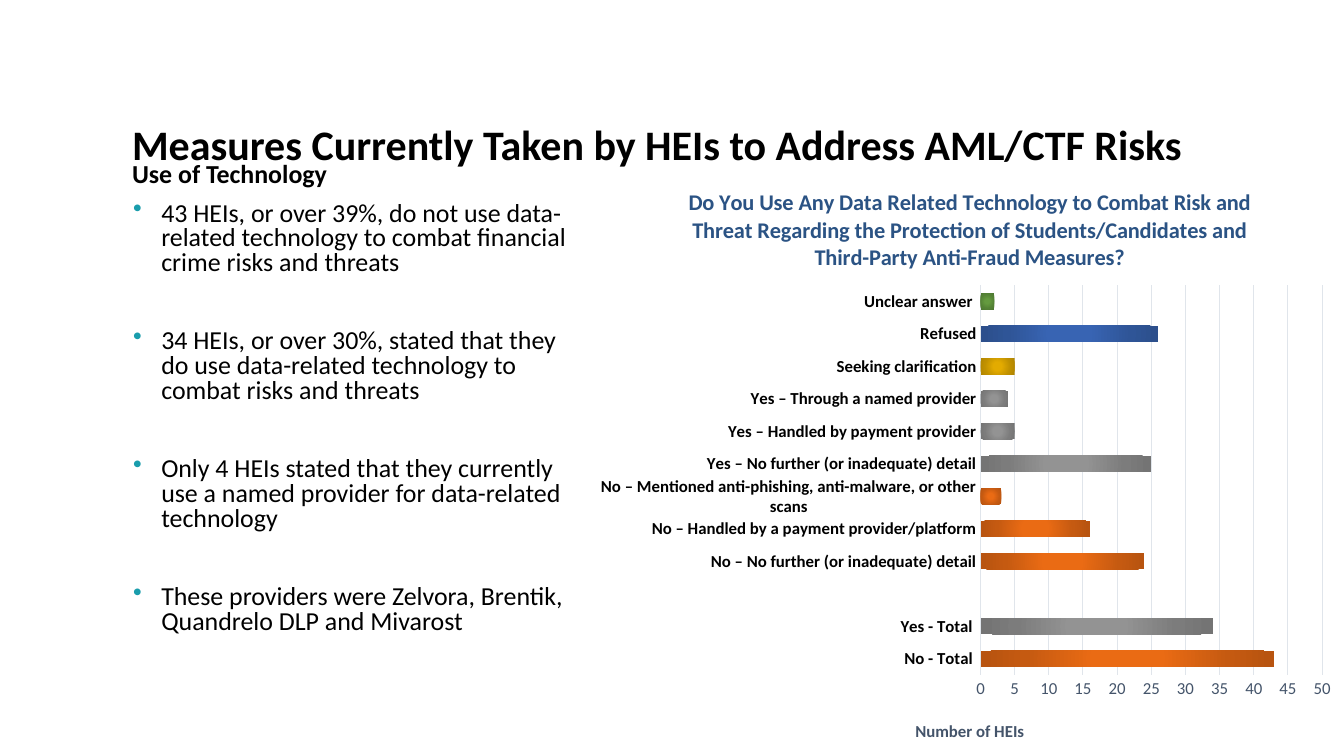
from pptx import Presentation
from pptx.chart.data import CategoryChartData
from pptx.dml.color import RGBColor
from pptx.enum.chart import XL_CHART_TYPE as ChartType, XL_TICK_MARK as TickMark
from pptx.enum.text import MSO_ANCHOR as Anchor
from pptx.oxml import parse_xml
from pptx.oxml.ns import nsdecls, qn
from pptx.util import Inches, Pt

FONT = "Calibri"
BLACK, TEAL, NAVY, SLATE, PALE = "000000", "1A9DAC", "2B5384", "44546A", "E0E5EB"

# Glow colours from the middle of a bar to its ends
ORANGE = ("EA6B14", "EA6B14", "C55A11", "B85410")
GREY = ("939393", "939393", "7C7C7C", "747474")
GOLD = ("E3AB00", "E3AB00", "BF9000", "B28600")
BLUE = ("3864B3", "3864B3", "2F5597", "2C4F8C")
GREEN = ("649A3F", "649A3F", "548235", "4E7932")
GLOW_STOPS = (0, 23, 69, 97)

FINDINGS = [
    "43 HEIs, or over 39%, do not use data-related technology to combat financial "
    "crime risks and threats",
    "34 HEIs, or over 30%, stated that they do use data-related technology to combat "
    "risks and threats",
    "Only 4 HEIs stated that they currently use a named provider for data-related technology",
    "These providers were Zelvora, Brentik, Quandrelo DLP and Mivarost",
]

QUESTION = (
    "Do You Use Any Data Related Technology to Combat Risk and Threat Regarding the "
    "Protection of Students/Candidates and Third-Party Anti-Fraud Measures?"
)

ANSWERS = [
    ("No - Total ", 43, ORANGE),
    ("Yes - Total ", 34, GREY),
    ("", None, None),
    ("No – No further (or inadequate) detail", 24, ORANGE),
    ("No – Handled by a payment provider/platform", 16, ORANGE),
    ("No – Mentioned anti-phishing, anti-malware, or other scans", 3, ORANGE),
    ("Yes – No further (or inadequate) detail", 25, GREY),
    ("Yes – Handled by payment provider", 5, GREY),
    ("Yes – Through a named provider", 4, GREY),
    ("Seeking clarification", 5, GOLD),
    ("Refused", 26, BLUE),
    ("Unclear answer ", 2, GREEN),
]


def rgb(color):
    return RGBColor.from_string(color)


def style_font(font, size, color, bold=False):
    font.name, font.size, font.bold = FONT, Pt(size), bold
    font.color.rgb = rgb(color)


def add_text_frame(slide, left, top, width, height):
    box = slide.shapes.add_textbox(Inches(left), Inches(top), Inches(width), Inches(height))
    frame = box.text_frame
    frame.word_wrap = True
    frame.margin_left = frame.margin_top = frame.margin_right = frame.margin_bottom = 0
    return frame


def write_paragraph(paragraph, text, size, line_spacing, bold=False, space_before=0):
    paragraph.text = text
    paragraph.line_spacing = line_spacing
    paragraph.space_before = Pt(space_before)
    style_font(paragraph.font, size, BLACK, bold)


def add_bullet(paragraph):
    properties = paragraph._p.get_or_add_pPr()
    properties.set("marL", str(Inches(0.29)))
    properties.set("indent", str(Inches(-0.28)))
    color = parse_xml(f'<a:buClr {nsdecls("a")}><a:srgbClr val="{TEAL}"/></a:buClr>')
    bullet = parse_xml(f'<a:buChar {nsdecls("a")} char="•"/>')
    properties.insert_element_before(color, "a:buChar", "a:defRPr")
    properties.insert_element_before(bullet, "a:defRPr")


def add_title(slide):
    frame = add_text_frame(slide, 1.31, 0.75, 10.87, 1.11)
    frame.vertical_anchor = Anchor.MIDDLE
    write_paragraph(frame.paragraphs[0], "Measures Currently Taken by HEIs to Address AML/CTF Risks",
                    30, 1.5, bold=True)


def add_findings(slide):
    frame = add_text_frame(slide, 1.31, 1.62, 4.5, 4.8)
    write_paragraph(frame.paragraphs[0], "Use of Technology", 18.5, 0.8, bold=True, space_before=10)
    for number, finding in enumerate(FINDINGS):
        paragraph = frame.add_paragraph()
        write_paragraph(paragraph, finding, 18.5, 0.8, space_before=38 if number else 10)
        add_bullet(paragraph)


def place(element, position, **fractions):
    """Fix a chart part at fractions of the chart's size; position is its layout's child index."""
    for layout in element.findall(qn("c:layout")):
        element.remove(layout)
    inner = '<c:layoutTarget val="inner"/>' if "w" in fractions else ""
    modes = "".join(f'<c:{side}Mode val="edge"/>' for side in "xy")
    values = "".join(f'<c:{side} val="{value}"/>' for side, value in fractions.items())
    element.insert(position, parse_xml(
        f'<c:layout {nsdecls("c")}><c:manualLayout>{inner}{modes}{values}'
        '</c:manualLayout></c:layout>'))


def write_chart_title(title, text, size, color, x, y):
    paragraph = title.text_frame.paragraphs[0]
    paragraph.text = text
    style_font(paragraph.font, size, color, bold=True)
    place(title._element, 1, x=x, y=y)


def glow_bar(series, index, colors):
    stops = "".join(f'<a:gs pos="{stop * 1000}"><a:srgbClr val="{color}"/></a:gs>'
                    for stop, color in zip(GLOW_STOPS, colors))
    bar = series._element.get_or_add_dPt_for_point(index).get_or_add_spPr()
    bar.append(parse_xml(
        f'<a:gradFill {nsdecls("a")}><a:gsLst>{stops}</a:gsLst><a:path path="circle">'
        '<a:fillToRect l="50000" t="50000" r="50000" b="50000"/></a:path></a:gradFill>'))


def style_line(line):
    line.color.rgb = rgb(PALE)
    line.width = Pt(0.75)


def style_axes(chart):
    answers, counts = chart.category_axis, chart.value_axis
    for axis in (answers, counts):
        axis.major_tick_mark = axis.minor_tick_mark = TickMark.NONE
    style_font(answers.tick_labels.font, 12, BLACK, bold=True)
    style_line(answers.format.line)
    style_font(counts.tick_labels.font, 12, SLATE)
    counts.format.line.fill.background()
    counts.minimum_scale, counts.maximum_scale, counts.major_unit = 0, 50, 5
    style_line(counts.major_gridlines.format.line)
    write_chart_title(counts.axis_title, "Number of HEIs", 12, SLATE, 0.43, 0.93)


def add_answers_chart(slide):
    data = CategoryChartData()
    data.categories = [label for label, _, _ in ANSWERS]
    data.add_series("Series 1", [count for _, count, _ in ANSWERS])
    chart = slide.shapes.add_chart(ChartType.BAR_CLUSTERED, Inches(5.81), Inches(1.58),
                                   Inches(7.53), Inches(5.95), data).chart
    style_font(chart.font, 10, BLACK)
    chart.has_legend = False
    write_chart_title(chart.chart_title, QUESTION, 16, NAVY, 0.13, 0.04)
    style_axes(chart)

    plot = chart.plots[0]
    plot.gap_width = 100
    plot.vary_by_categories = False
    for index, (_, _, colors) in enumerate(ANSWERS):
        if colors:
            glow_bar(plot.series[0], index, colors)
    place(plot._element.getparent(), 0, x=0.52, y=0.21, w=0.45, h=0.65)


def main():
    deck = Presentation()
    deck.slide_width, deck.slide_height = Inches(13.33), Inches(7.5)
    slide = deck.slides.add_slide(deck.slide_layouts[6])
    add_title(slide)
    add_findings(slide)
    add_answers_chart(slide)
    deck.save("out.pptx")


if __name__ == "__main__":
    main()
